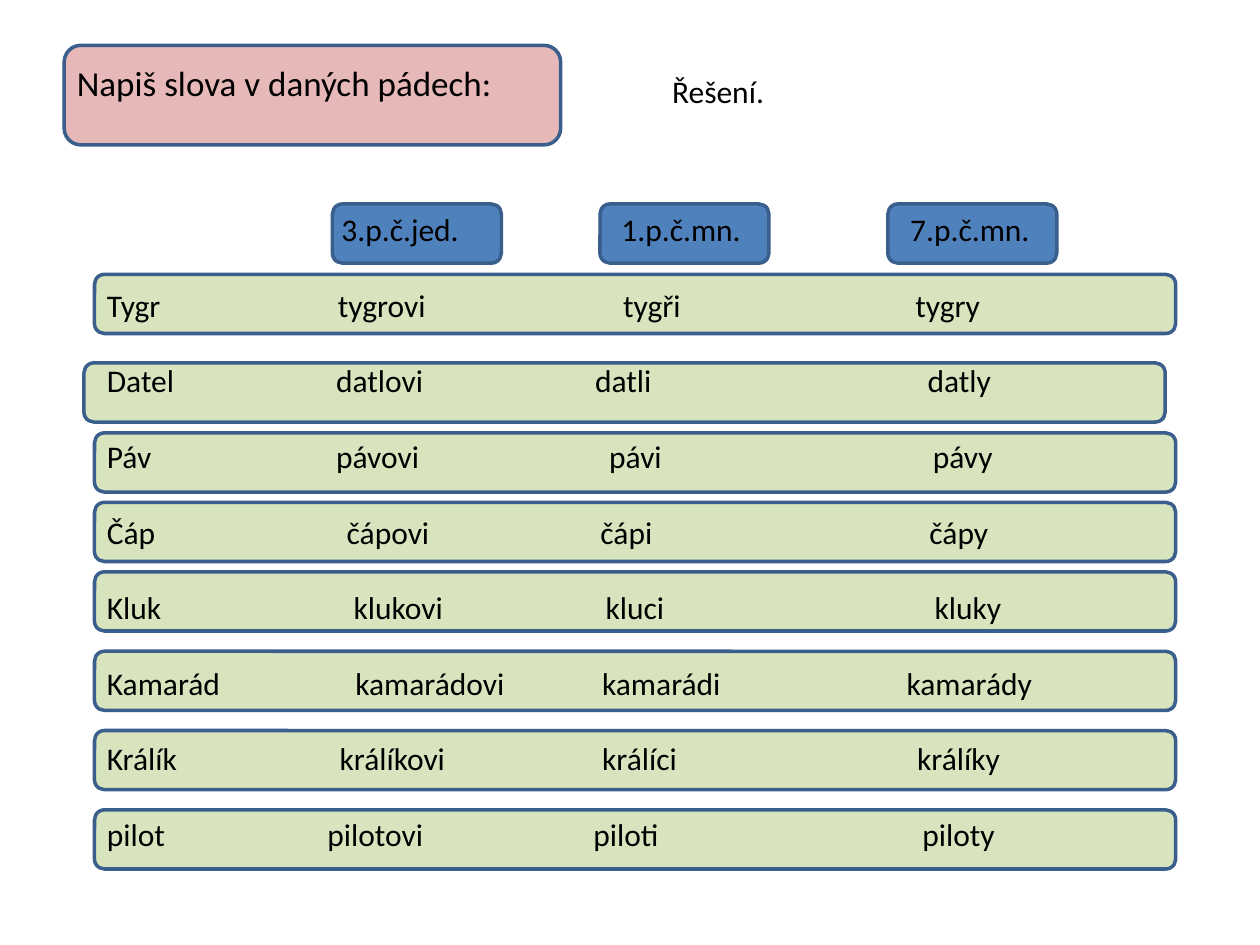
from lxml.etree import SubElement
from pptx import Presentation
from pptx.dml.color import RGBColor
from pptx.enum.shapes import MSO_SHAPE
from pptx.enum.text import MSO_ANCHOR, PP_ALIGN
from pptx.oxml.ns import qn
from pptx.util import Pt

FONT = "Calibri"
BLACK, LINE = "000000", "3A5F8C"
PINK, GREEN, BLUE = "E6B9B8", "D7E4BD", "4F81BD"

# Words of each line with the tab stops (points) they start at
LINES = [
    (["", "3.p.č.jed.", "1.p.č.mn.", "7.p.č.mn."], (134, 294, 459)),
    (["Tygr", "tygrovi", "tygři", "tygry"], (132, 295, 462)),
    (["Datel", "datlovi", "datli", "datly"], (131, 279, 469)),
    (["Páv", "pávovi", "pávi", "pávy"], (131, 287, 472)),
    (["Čáp", "čápovi", "čápi", "čápy"], (137, 282, 470)),
    (["Kluk", "klukovi", "kluci", "kluky"], (141, 285, 473)),
    (["Kamarád", "kamarádovi", "kamarádi", "kamarády"], (142, 283, 457)),
    (["Králík", "královi".replace("lov", "líkov"), "králíci", "králíky"], (133, 283, 463)),
    (["pilot", "pilotovi", "piloti", "piloty"], (126, 278, 466)),
]
LINES[7][0][1] = "králíkovi"
ROW_TOPS = [156.8, 207.4, 247.4, 287.1, 326.8, 372.2, 417.5, 462.8]
HEADER_LEFTS = [190, 342.9, 507.4]


def color(value):
    return RGBColor.from_string(value)


def add_card(s, x, y, w, h, fill):
    sp = s.shapes.add_shape(MSO_SHAPE.ROUNDED_RECTANGLE, Pt(x), Pt(y), Pt(w), Pt(h))
    sp.shadow.inherit = False
    sp.fill.solid()
    sp.fill.fore_color.rgb = color(fill)
    sp.line.color.rgb = color(LINE)
    sp.line.width = Pt(2)


def format_text(p, size):
    p.alignment = PP_ALIGN.LEFT
    for r in p.runs:
        r.font.name = FONT
        r.font.size = Pt(size)
        r.font.color.rgb = color(BLACK)


def add_text(s, x, y, w, h):
    tf = s.shapes.add_textbox(Pt(x), Pt(y), Pt(w), Pt(h)).text_frame
    tf.word_wrap = True
    return tf


def set_tabs(p, stops):
    tabs = SubElement(p._p.get_or_add_pPr(), qn("a:tabLst"))
    for stop in stops:
        SubElement(tabs, qn("a:tab"), pos=str(Pt(stop)), algn="l")


def add_title(s, x, y, w, h):
    add_card(s, x, y, w, h, PINK)
    title = s.shapes.title
    s.shapes._spTree.append(title._element)  # bring in front of the card
    title.left, title.top, title.width, title.height = Pt(x), Pt(y + 5.8), Pt(w), Pt(31.7)
    tf = title.text_frame
    tf.text = "Napiš slova v daných pádech:"
    tf.vertical_anchor = MSO_ANCHOR.TOP
    tf.word_wrap = True
    format_text(tf.paragraphs[0], 20)


def add_words(s, x, y, w, h):
    # Green rows, the second one set slightly to the left
    for i, top in enumerate(ROW_TOPS):
        add_card(s, x - 6 if i == 1 else x, top, 617.8, 33.8, GREEN)
    # Column headers
    for left in HEADER_LEFTS:
        add_card(s, left, y, 96.5, 33.8, BLUE)
    # Words
    tf = add_text(s, x, y, w, h)
    for i, (words, stops) in enumerate(LINES):
        p = tf.add_paragraph() if i else tf.paragraphs[0]
        p.text = "\t".join(words)
        format_text(p, 18)
        if i:
            p.space_before = Pt(21.6)
        set_tabs(p, stops)


def add_solution(s, x, y, w, h):
    tf = add_text(s, x, y, w, h)
    tf.text = "Řešení."
    format_text(tf.paragraphs[0], 18)


def main():
    prs = Presentation()
    prs.slide_width, prs.slide_height = Pt(720), Pt(540)
    s = prs.slides.add_slide(prs.slide_layouts[5])
    add_words(s, 54, 116.6, 578, 378)
    add_title(s, 36.7, 25.9, 283.7, 56.9)
    add_solution(s, 377, 37.4, 130, 28.8)
    prs.save("out.pptx")


if __name__ == "__main__":
    main()
